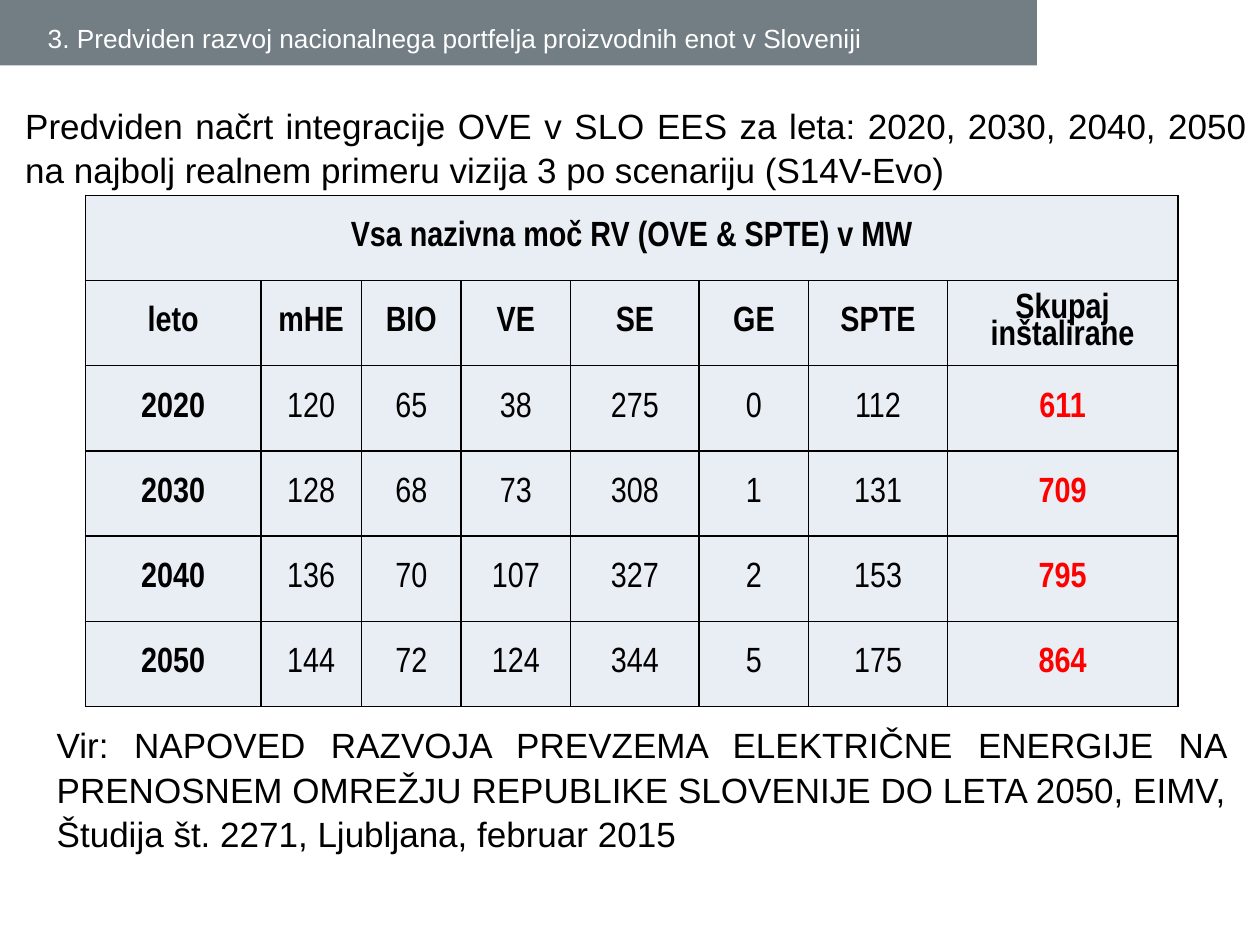
from dataclasses import dataclass

from lxml import etree
from pptx import Presentation
from pptx import util as u
from pptx.dml.color import RGBColor
from pptx.enum import shapes, text
from pptx.oxml import ns


@dataclass(frozen=True)
class Theme:
    bar: RGBColor = RGBColor(0x72, 0x7D, 0x84)
    cell: RGBColor = RGBColor(0xE9, 0xED, 0xF4)
    black: RGBColor = RGBColor(0, 0, 0)
    white: RGBColor = RGBColor(255, 255, 255)
    total: RGBColor = RGBColor(255, 0, 0)
    border: str = "000000"
    font: str = "Arial"
    table_font: str = "Arial Narrow"
    title_size: int = 15
    body_size: int = 20


THEME = Theme()

TABLE_TITLE = "Vsa nazivna moč RV (OVE & SPTE) v MW"
HEADERS = ["leto", "mHE", "BIO", "VE", "SE", "GE", "SPTE", "Skupaj inštalirane"]
CAPACITIES = [
    [2020, 120, 65, 38, 275, 0, 112, 611],
    [2030, 128, 68, 73, 308, 1, 131, 709],
    [2040, 136, 70, 107, 327, 2, 153, 795],
    [2050, 144, 72, 124, 344, 5, 175, 864],
]
COL_WIDTHS = [1.39, 0.8, 0.79, 0.87, 1.02, 0.87, 1.1, 1.83]
TABLE_HEIGHT = 4.06


def style(p, font, size, color, bold=False):
    p.font.name = font
    p.font.size = u.Pt(size)
    p.font.color.rgb = color
    p.font.bold = bold


def add_bar(slide, x, y, w, h):
    sp = slide.shapes.add_shape(shapes.MSO_SHAPE.RECTANGLE, *map(u.Inches, (x, y, w, h)))
    sp.shadow.inherit = False
    sp.fill.solid()
    sp.fill.fore_color.rgb = THEME.bar
    sp.line.fill.background()


def add_text(slide, x, y, w, h, content, size, color):
    tf = slide.shapes.add_textbox(*map(u.Inches, (x, y, w, h))).text_frame
    tf.word_wrap = True
    p = tf.paragraphs[0]
    p.text = content
    style(p, THEME.font, size, color)
    return tf


def add_justified(slide, x, y, w, h, content):
    tf = add_text(slide, x, y, w, h, content, THEME.body_size, THEME.black)
    tf.margin_left = u.Inches(0.2)
    p = tf.paragraphs[0]
    p.alignment = text.PP_ALIGN.JUSTIFY
    p.line_spacing = 1.05


def add_borders(cell):
    # Border lines come before the fill in the cell properties
    tc_pr = cell._tc.get_or_add_tcPr()
    for i, side in enumerate(("lnL", "lnR", "lnT", "lnB")):
        ln = etree.Element(ns.qn(f"a:{side}"), w=str(u.Pt(1)))
        fill = etree.SubElement(ln, ns.qn("a:solidFill"))
        etree.SubElement(fill, ns.qn("a:srgbClr"), val=THEME.border)
        tc_pr.insert(i, ln)


def fill_cell(cell, content, color, bold):
    cell.margin_left = cell.margin_right = cell.margin_top = u.Inches(0.01)
    cell.margin_bottom = 0
    cell.vertical_anchor = text.MSO_ANCHOR.MIDDLE
    cell.fill.solid()
    cell.fill.fore_color.rgb = THEME.cell
    add_borders(cell)
    p = cell.text_frame.paragraphs[0]
    p.text = content
    p.alignment = text.PP_ALIGN.CENTER
    p.line_spacing = 0.82
    style(p, THEME.table_font, THEME.body_size, color, bold)


def add_capacity_table(slide, x, y):
    last = len(HEADERS) - 1
    title_row = [TABLE_TITLE] + [""] * last
    rows = [title_row, HEADERS] + CAPACITIES
    table = slide.shapes.add_table(
        len(rows), len(HEADERS), u.Inches(x), u.Inches(y),
        u.Inches(sum(COL_WIDTHS)), u.Inches(TABLE_HEIGHT)).table
    for col, width in zip(table.columns, COL_WIDTHS):
        col.width = u.Inches(width)
    for r, values in enumerate(rows):
        for c, value in enumerate(values):
            is_data = r > 1
            color = THEME.total if is_data and c == last else THEME.black
            fill_cell(table.cell(r, c), str(value), color, not is_data or c in (0, last))
    table.cell(0, 0).merge(table.cell(0, last))


def main():
    prs = Presentation()
    prs.slide_width, prs.slide_height = u.Inches(10), u.Inches(7.5)
    slide = prs.slides.add_slide(prs.slide_layouts[6])

    # Header bar with section title
    add_bar(slide, 0, 0, 8.23, 0.52)
    add_text(slide, 0.28, 0.13, 7.95, 0.39,
             "3. Predviden razvoj nacionalnega portfelja proizvodnih enot v Sloveniji",
             THEME.title_size, THEME.white)

    # Introduction
    add_justified(slide, 0, 0.76, 10, 1.11,
                  "Predviden načrt integracije OVE v SLO EES za leta: 2020, 2030, 2040, 2050 "
                  "na najbolj realnem primeru vizija 3 po scenariju (S14V-Evo)")

    # Installed capacity by year
    add_capacity_table(slide, 0.68, 1.55)

    # Source of the data
    add_justified(slide, 0.25, 5.68, 9.58, 1.11,
                  "Vir: NAPOVED RAZVOJA PREVZEMA ELEKTRIČNE ENERGIJE NA PRENOSNEM OMREŽJU "
                  "REPUBLIKE SLOVENIJE DO LETA 2050, EIMV, Študija št. 2271, Ljubljana, "
                  "februar 2015")

    prs.save("out.pptx")


if __name__ == "__main__":
    main()
